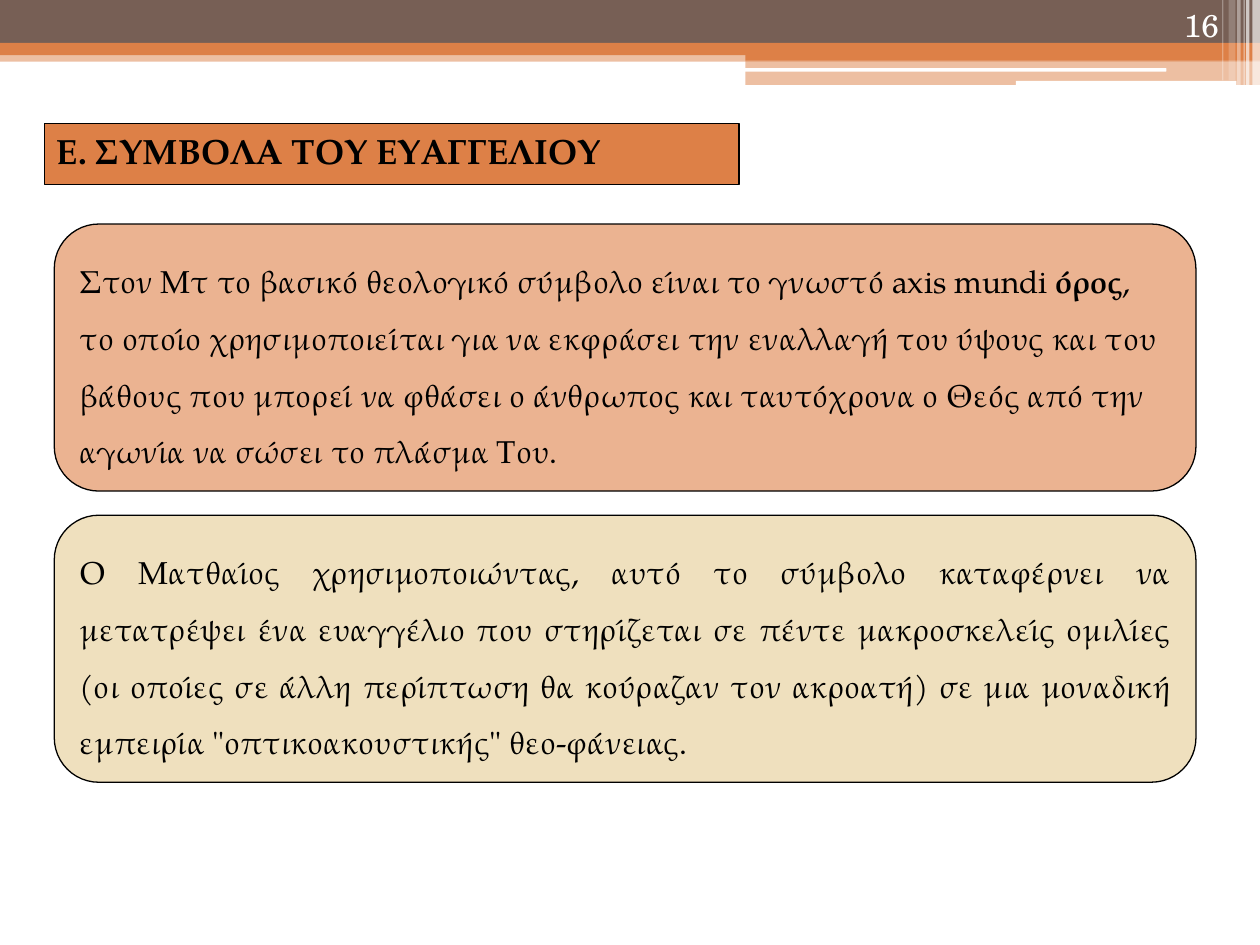
from dataclasses import dataclass

from lxml.etree import SubElement
from pptx import Presentation
from pptx.dml.color import RGBColor
from pptx.enum.shapes import MSO_SHAPE
from pptx.enum.text import MSO_ANCHOR, PP_ALIGN
from pptx.oxml import parse_xml
from pptx.oxml.ns import nsdecls, qn
from pptx.util import Pt


@dataclass(frozen=True)
class Theme:
    brown: str = "775F55"
    orange: str = "DD8047"
    peach: str = "EBB391"
    sand: str = "EFE0BE"
    white: str = "FFFFFF"
    black: str = "000000"
    font: str = "TeX Gyre Pagella"
    digits: str = "TeX Gyre Schola"
    head: int = 20
    body: int = 18
    line: float = 0.75


class Deck:
    def __init__(self, theme):
        self.theme = theme
        self.prs = Presentation()
        self.prs.slide_width, self.prs.slide_height = Pt(720), Pt(540)
        self.slide = self.prs.slides.add_slide(self.prs.slide_layouts[5])

    def paint(self, shape, color, alpha=100):
        """Fill a shape; alpha is its opacity in percent."""
        shape.fill.solid()
        shape.fill.fore_color.rgb = RGBColor.from_string(color)
        if alpha < 100:
            tone = shape.fill._xPr.find(".//" + qn("a:srgbClr"))
            SubElement(tone, qn("a:alpha"), val=str(alpha * 1000))

    def edge(self, shape):
        shape.line.width = Pt(self.theme.line)
        shape.line.color.rgb = RGBColor.from_string(self.theme.black)

    def style(self, para, size, color, font, align):
        para.alignment = align
        para.font.size, para.font.name = Pt(size), font
        para.font.color.rgb = RGBColor.from_string(color)

    def shape(self, box, color, alpha=100, kind=MSO_SHAPE.RECTANGLE):
        item = self.slide.shapes.add_shape(kind, *map(Pt, box))
        item.shadow.inherit = False
        item.line.fill.background()
        self.paint(item, color, alpha)
        return item

    def title(self, box, text):
        t = self.theme
        item = self.slide.shapes.title
        item.left, item.top, item.width, item.height = map(Pt, box)
        item._element.spPr.append(parse_xml(
            f'<a:prstGeom {nsdecls("a")} prst="roundRect"><a:avLst/></a:prstGeom>'))
        self.paint(item, t.orange)
        self.edge(item)
        frame = item.text_frame
        frame.text = text
        frame.vertical_anchor = MSO_ANCHOR.TOP
        para = frame.paragraphs[0]
        self.style(para, t.head, t.black, t.font, PP_ALIGN.LEFT)
        para.font.bold = True

    def panel(self, box, color, parts, align):
        """Rounded panel; every second part of its text is bold."""
        t = self.theme
        item = self.shape(box, color, kind=MSO_SHAPE.ROUNDED_RECTANGLE)
        self.edge(item)
        item.text_frame.vertical_anchor = MSO_ANCHOR.TOP
        para = item.text_frame.paragraphs[0]
        para.line_spacing = 1.5
        self.style(para, t.body, t.black, t.font, align)
        for i, part in enumerate(parts):
            run = para.add_run()
            run.text = part
            if i % 2:
                run.font.bold = True

    def number(self, box, text):
        t = self.theme
        frame = self.slide.shapes.add_textbox(*map(Pt, box)).text_frame
        frame.word_wrap = True
        frame.vertical_anchor = MSO_ANCHOR.BOTTOM
        frame.text = text
        self.style(frame.paragraphs[0], t.body, t.white, t.digits, PP_ALIGN.RIGHT)


def main():
    t = Theme()
    deck = Deck(t)

    bands = [
        ((0, 28.8, 720, 6.5), t.orange, 50),
        ((0, 0, 720, 24.5), t.brown, 100),
        ((0, 24.5, 720, 7), t.orange, 100),
        ((426, 28, 294, 6.6), t.orange, 100),
        ((426, 34.6, 294, 14), t.orange, 50),
    ]
    for band in bands:
        deck.shape(*band)
    for box in [(425.5, 38.9, 241, 2), (580.5, 46.2, 126, 2.6)]:
        deck.shape(box, t.white, kind=MSO_SHAPE.ROUNDED_RECTANGLE)

    # left, width, height, opacity
    stripes = [
        (715.7, 4.3, 49, 65), (712, 2, 49, 65), (710.6, 0.7, 49, 60),
        (707, 2, 49, 40), (702, 4, 46, 20), (698.4, 0.7, 46, 30),
    ]
    for left, wide, high, alpha in stripes:
        deck.shape((left, 0, wide, high), t.white, alpha)

    panels = [
        (t.peach, PP_ALIGN.LEFT, [
            "Στον Μτ το βασικό θεολογικό σύμβολο είναι το γνωστό axis mundi ",
            "όρος",
            ", το οποίο χρησιμοποιείται για να εκφράσει την εναλλαγή του "
            "ύψους και του βάθους που μπορεί να φθάσει ο άνθρωπος και "
            "ταυτόχρονα ο Θεός από την αγωνία να σώσει το πλάσμα Του."]),
        (t.sand, PP_ALIGN.JUSTIFY, [
            "Ο Ματθαίος χρησιμοποιώντας, αυτό το σύμβολο καταφέρνει να "
            "μετατρέψει ένα ευαγγέλιο που στηρίζεται σε πέντε μακροσκελείς "
            "ομιλίες (οι οποίες σε άλλη περίπτωση θα κούραζαν τον ακροατή) "
            'σε μια μοναδική εμπειρία "οπτικοακουστικής" θεο-φάνειας.']),
    ]
    for i, (color, align, parts) in enumerate(panels):
        deck.panel((31, 128 + i * 166.4, 652.4, 152.6), color, parts, align)

    deck.number((644, 0, 59.5, 28.8), "16")
    deck.title((25.3, 70.5, 397, 34.8), "Ε. ΣΥΜΒΟΛΑ ΤΟΥ ΕΥΑΓΓΕΛΙΟΥ")
    deck.prs.save("out.pptx")


if __name__ == "__main__":
    main()
